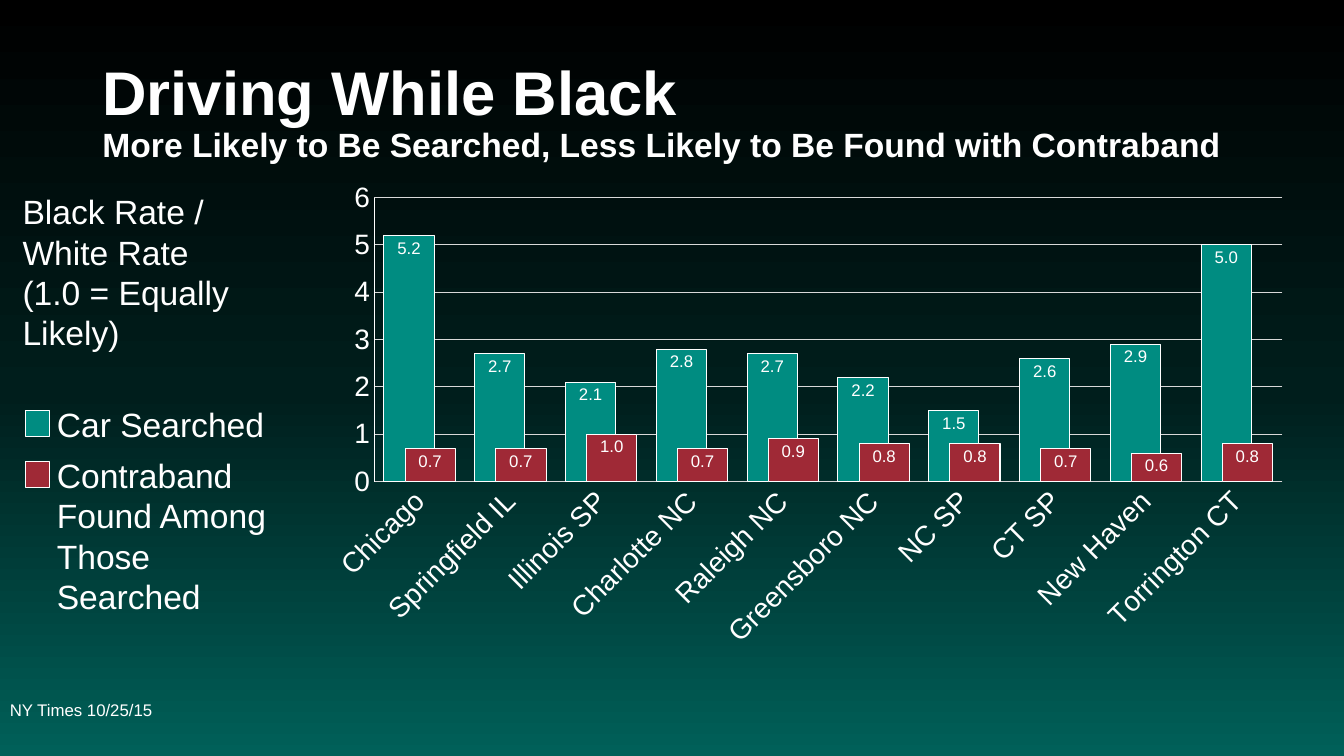
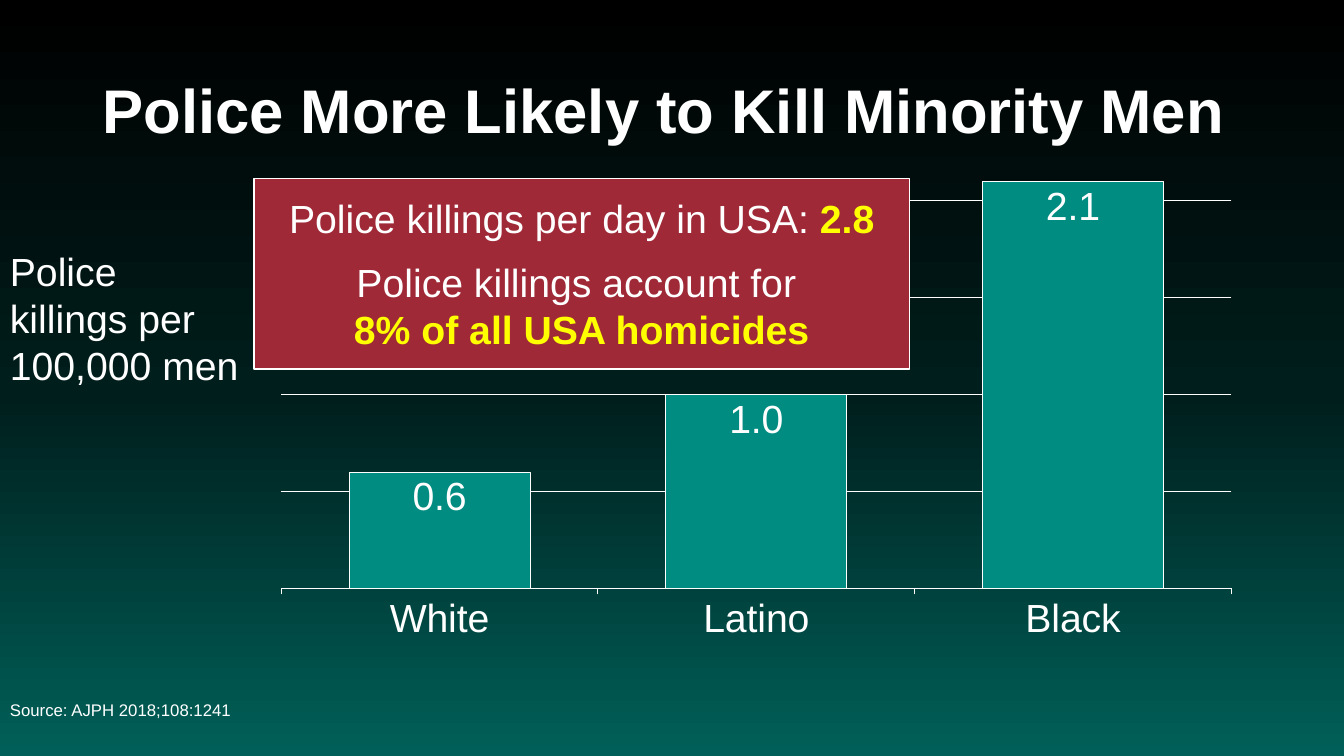
from copy import deepcopy

from lxml.etree import SubElement
from pptx import Presentation
from pptx.chart.data import CategoryChartData
from pptx.dml.color import RGBColor
from pptx.enum.chart import XL_CHART_TYPE as ChartType
from pptx.enum.chart import XL_LABEL_POSITION as LabelPosition
from pptx.enum.chart import XL_TICK_MARK as Tick
from pptx.enum.shapes import MSO_SHAPE as Shape
from pptx.enum.text import MSO_ANCHOR as Anchor
from pptx.enum.text import MSO_AUTO_SIZE as AutoSize
from pptx.enum.text import PP_ALIGN as Align
from pptx.oxml.ns import qn
from pptx.util import Pt

COLORS = {
    "text": "FFFFFF",
    "teal": "008C81",
    "red": "9F2936",
    "highlight": "FFFF00",
    "grid": "D9D9D9",
}
BACKGROUND = [(0, "000000"), (0.52, "001E1C"), (1, "006059")]
FONT = "Arial"
TITLE_BOX = (66, 29, 828, 104)
FOOTER_BOX = (0, 474, 648, 66)


def color(name):
    return RGBColor.from_string(COLORS[name])


def set_all(target, values):
    for name, value in values.items():
        setattr(target, name, value)


def set_font(font, size, name="text", bold=False):
    set_all(font, {"name": FONT, "size": Pt(size), "bold": bold})
    font.color.rgb = color(name)


def set_line(line, name="text", width=0.75):
    line.color.rgb = color(name)
    line.width = Pt(width)


def place(shape, box):
    for name, value in zip(("left", "top", "width", "height"), box):
        setattr(shape, name, Pt(value))


# Shared background
def paint_background(master):
    fill = master.background.fill
    fill.gradient()
    fill.gradient_angle = 270
    stop_list = next(master.element.iter(qn("a:gsLst")))
    stop_list.append(deepcopy(stop_list[-1]))
    for stop, (position, value) in zip(fill.gradient_stops, BACKGROUND):
        stop.position = position
        stop.color.rgb = RGBColor.from_string(value)


# Text parts
def add_span(para, text, size, name="text", bold=False):
    span = para.add_run()
    span.text = text
    set_font(span.font, size, name, bold)


def add_title(page, lines):
    title = page.shapes.title
    place(title, TITLE_BOX)
    set_all(title.text_frame, {"word_wrap": True, "auto_size": AutoSize.NONE,
                               "vertical_anchor": Anchor.MIDDLE})
    para = title.text_frame.paragraphs[0]
    set_all(para, {"alignment": Align.LEFT, "line_spacing": 0.9})
    for index, (text, size) in enumerate(lines):
        if index:
            para.add_line_break()
        add_span(para, text, size, bold=True)


def add_text(page, box, texts, size, anchor=Anchor.TOP):
    shape = page.shapes.add_textbox(*map(Pt, box))
    frame = shape.text_frame
    set_all(frame, {"word_wrap": True, "vertical_anchor": anchor})
    for index, text in enumerate(texts):
        para = frame.add_paragraph() if index else frame.paragraphs[0]
        add_span(para, text, size)


def add_rectangle(page, box, fill, width=0.75):
    shape = page.shapes.add_shape(Shape.RECTANGLE, *map(Pt, box))
    shape.shadow.inherit = False
    shape.fill.solid()
    shape.fill.fore_color.rgb = color(fill)
    set_line(shape.line, width=width)
    return shape


def add_legend(page, box, entries):
    left, top, width, height = box
    for index, (text, fill) in enumerate(entries):
        row = top + index * 36.5
        add_rectangle(page, (left, row + 8, 17, 18.5), fill)
        add_text(page, (left + 15, row, width - 15, height), [text], 24)


def add_callout(page, box, paragraphs, size):
    frame = add_rectangle(page, box, "red", width=1).text_frame
    set_all(frame, {"word_wrap": True, "vertical_anchor": Anchor.MIDDLE})
    for index, (spans, gap) in enumerate(paragraphs):
        para = frame.add_paragraph() if index else frame.paragraphs[0]
        set_all(para, {"alignment": Align.CENTER, "space_after": Pt(gap)})
        for text, strong in spans:
            add_span(para, text, size, "highlight" if strong else "text", strong)


# Chart parts
def fix_plot_area(chart, area):
    plot_area = next(chart.element.iter(qn("c:plotArea")))
    layout = plot_area.find(qn("c:layout"))
    if layout is None:
        layout = SubElement(plot_area, qn("c:layout"))
        plot_area.insert(0, layout)
    manual = SubElement(layout, qn("c:manualLayout"))
    values = [("layoutTarget", "inner"), ("xMode", "edge"), ("yMode", "edge")]
    for tag, value in values + list(zip("xywh", area)):
        SubElement(manual, qn("c:" + tag)).set("val", str(value))


def add_columns(page, box, categories, series, scale, sizes,
                gap, overlap, number_format, grid):
    data = CategoryChartData()
    data.categories = categories
    for index, (values, fill) in enumerate(series, 1):
        data.add_series(f"Series {index}", values)
    chart = page.shapes.add_chart(
        ChartType.COLUMN_CLUSTERED, *map(Pt, box), data).chart
    set_all(chart, {"has_legend": False, "has_title": False})
    set_font(chart.font, sizes["axis"])

    plot = chart.plots[0]
    set_all(plot, {"gap_width": gap, "overlap": overlap,
                   "vary_by_categories": False})
    for item, (values, fill) in zip(plot.series, series):
        item.format.fill.solid()
        item.format.fill.fore_color.rgb = color(fill)
        set_line(item.format.line)
        labels = item.data_labels
        set_all(labels, {"show_value": True, "number_format": number_format,
                         "number_format_is_linked": False,
                         "position": LabelPosition.INSIDE_END})
        set_font(labels.font, sizes["label"])

    set_all(chart.value_axis, {
        "minimum_scale": 0, "maximum_scale": scale[0], "major_unit": scale[1],
        "major_tick_mark": Tick.NONE, "has_major_gridlines": True})
    set_line(chart.value_axis.major_gridlines.format.line, *grid)
    for axis in (chart.category_axis, chart.value_axis):
        set_font(axis.tick_labels.font, sizes["axis"])
        set_line(axis.format.line)
    return chart


# Slides
def start_slide(deck, title_lines, source):
    page = deck.slides.add_slide(deck.slide_layouts[5])
    add_title(page, title_lines)
    add_text(page, FOOTER_BOX, [source], 12, Anchor.MIDDLE)
    return page


def build_search_slide(deck):
    page = start_slide(deck, [
        ("Driving While Black", 44),
        ("More Likely to Be Searched, Less Likely to Be Found with Contraband", 24),
    ], "NY Times 10/25/15")
    # The plot area stays automatic so the slanted city names get full room
    chart = add_columns(
        page, (225, 123, 705, 347),
        ["Chicago", "Springfield IL", "Illinois SP", "Charlotte NC", "Raleigh NC",
         "Greensboro NC", "NC SP", "CT SP", "New Haven", "Torrington CT"],
        [([5.2, 2.7, 2.1, 2.8, 2.7, 2.2, 1.5, 2.6, 2.9, 5.0], "teal"),
         ([0.7, 0.7, 1.0, 0.7, 0.9, 0.8, 0.8, 0.7, 0.6, 0.8], "red")],
        scale=(6, 1), sizes={"axis": 20, "label": 12}, gap=39, overlap=58,
        number_format="#,##0.0", grid=("grid", 0.75))
    axis = chart.category_axis
    axis.major_tick_mark = Tick.NONE
    set_line(axis.format.line, "grid")
    next(axis._element.iter(qn("a:bodyPr"))).set("rot", "-2700000")
    add_text(page, (9, 133, 168, 124),
             ["Black Rate / White Rate", "(1.0 = Equally Likely)"], 24)
    add_legend(page, (18.5, 285, 185, 36), [
        ("Car Searched", "teal"),
        ("Contraband Found Among Those Searched", "red"),
    ])


def build_killings_slide(deck):
    page = start_slide(deck, [("Police More Likely to Kill Minority Men", 44)],
                       "Source: AJPH 2018;108:1241")
    add_text(page, (0, 172.5, 181, 109), ["Police killings per 100,000 men"], 28,
             Anchor.MIDDLE)
    chart = add_columns(
        page, (172, 97, 722, 376), ["White", "Latino", "Black"],
        [([0.6, 1.0, 2.1], "teal")],
        scale=(2.2, 0.5), sizes={"axis": 28, "label": 28}, gap=75, overlap=-7,
        number_format="0.0", grid=("text", 0.5))
    fix_plot_area(chart, (0.04, 0.05, 0.94, 0.81))
    chart.value_axis.visible = False
    chart.category_axis.major_tick_mark = Tick.OUTSIDE
    add_callout(page, (181.5, 127.5, 468, 136), [
        ([("Police killings per day in USA: ", False), ("2.8", True)], 12),
        ([("Police killings account for ", False)], 0),
        ([("8% of all USA homicides", True)], 12),
    ], 28)


def main():
    deck = Presentation()
    set_all(deck, {"slide_width": Pt(960), "slide_height": Pt(540)})
    paint_background(deck.slide_master)
    build_search_slide(deck)
    build_killings_slide(deck)
    deck.save("out.pptx")


if __name__ == "__main__":
    main()
